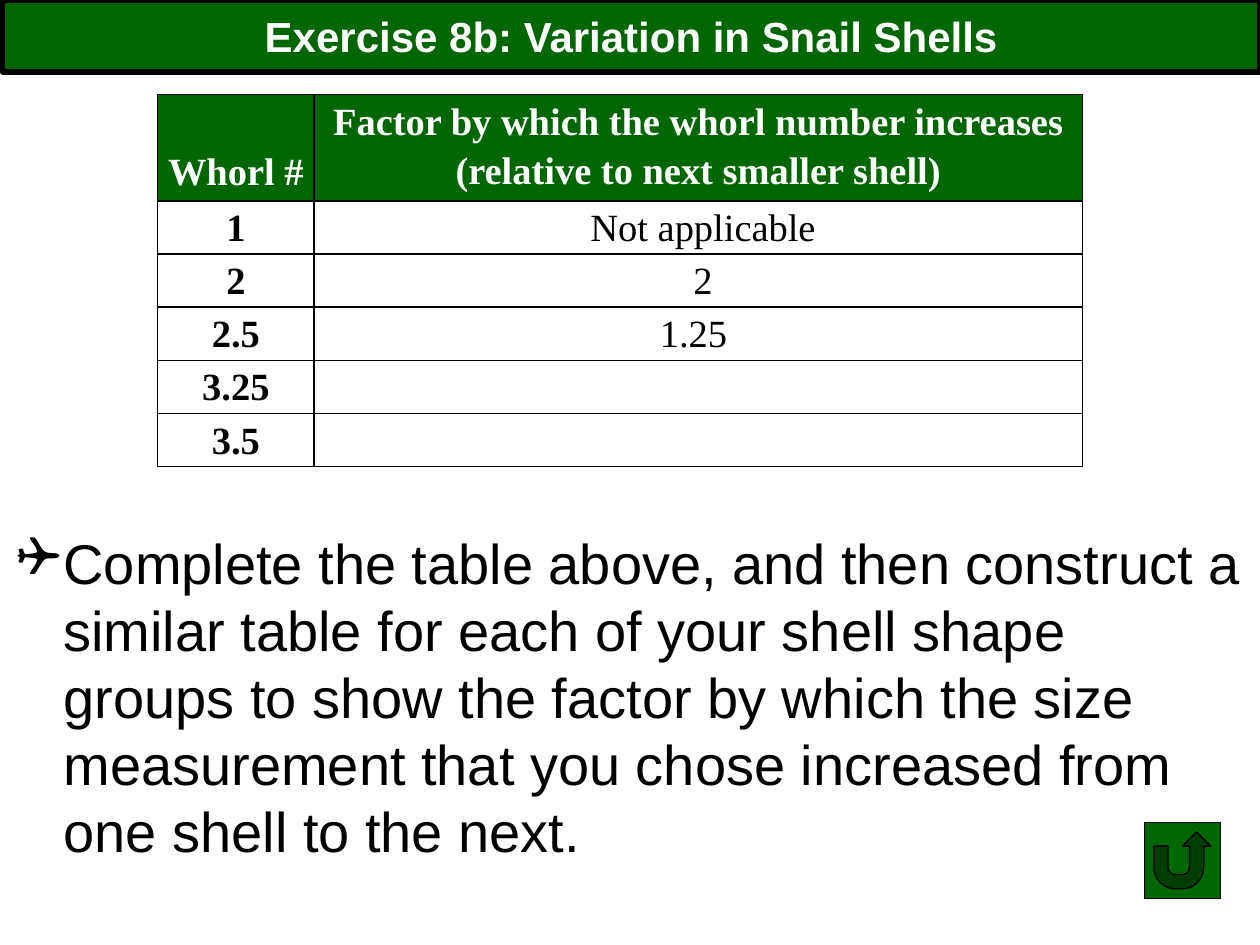
from dataclasses import dataclass

from lxml import etree
from pptx import Presentation
from pptx.dml.color import RGBColor
from pptx.enum.shapes import MSO_SHAPE
from pptx.enum.text import MSO_ANCHOR, PP_ALIGN
from pptx.oxml.ns import qn
from pptx.util import Cm, Pt

RETURN_BUTTON = MSO_SHAPE.ACTION_BUTTON_RETURN
CENTER, LEFT = PP_ALIGN.CENTER, PP_ALIGN.LEFT
TOP, MIDDLE, BOTTOM = MSO_ANCHOR.TOP, MSO_ANCHOR.MIDDLE, MSO_ANCHOR.BOTTOM

GREEN, WHITE, BLACK = "006600", "FFFFFF", "000000"
SANS, SERIF = "Arial", "Times New Roman"


@dataclass
class TextStyle:
    font: str
    size: float
    color: str
    bold: bool = False


@dataclass
class Row:
    whorl: str
    factor: list[str]
    height: float = 0.99
    header: bool = False


ROWS = [
    Row("Whorl #", ["Factor by which the whorl number increases",
                    "(relative to next smaller shell)"], 2.01, True),
    Row("1", [" Not applicable"]),
    Row("2", [" 2"]),
    Row("2.5", ["1.25 "]),
    Row("3.25", []),
    Row("3.5", []),
]
COL_WIDTHS = [3.15, 15.49]


def rgb(color: str) -> RGBColor:
    return RGBColor.from_string(color)


def paint(s, fill: str, line_width: float) -> None:
    s.fill.solid()
    s.fill.fore_color.rgb = rgb(fill)
    s.line.color.rgb = rgb(BLACK)
    s.line.width = Pt(line_width)


def add_run(p, text: str, style: TextStyle) -> None:
    r = p.add_run()
    r.text = text
    r.font.name = style.font
    r.font.size = Pt(style.size)
    r.font.bold = style.bold
    r.font.color.rgb = rgb(style.color)


def add_borders(cell, width: float) -> None:
    tc_pr = cell._tc.get_or_add_tcPr()
    for i, side in enumerate(("lnL", "lnR", "lnT", "lnB")):
        ln = etree.Element(qn(f"a:{side}"), w=str(Pt(width)))
        fill = etree.SubElement(ln, qn("a:solidFill"))
        etree.SubElement(fill, qn("a:srgbClr"), val=BLACK)
        tc_pr.insert(i, ln)


def fill_cell(cell, lines: list[str], style: TextStyle, fill: str) -> None:
    cell.margin_left = cell.margin_right = Cm(0.2)
    cell.margin_top = cell.margin_bottom = 0
    cell.vertical_anchor = TOP
    cell.fill.solid()
    cell.fill.fore_color.rgb = rgb(fill)
    add_borders(cell, 1)
    tf = cell.text_frame
    for i, line in enumerate(lines):
        p = tf.add_paragraph() if i else tf.paragraphs[0]
        p.alignment = CENTER
        p.line_spacing = 1.15
        add_run(p, line, style)


def add_title(slide, text: str) -> None:
    s = slide.shapes.title
    s.left, s.top, s.width, s.height = Cm(0.05), Cm(0), Cm(25.35), Cm(1.45)
    paint(s, GREEN, 3)
    tf = s.text_frame
    tf.vertical_anchor = MIDDLE
    p = tf.paragraphs[0]
    p.alignment = CENTER
    add_run(p, text, TextStyle(SANS, 24, WHITE, True))


def add_task(slide, text: str) -> None:
    s = slide.shapes.add_textbox(Cm(0.08), Cm(10.52), Cm(25.4), Cm(7.49))
    s.fill.solid()
    s.fill.fore_color.rgb = rgb(WHITE)
    tf = s.text_frame
    tf.word_wrap = True
    p = tf.paragraphs[0]
    p_pr = p._p.get_or_add_pPr()
    p_pr.set("marL", str(Cm(0.95)))
    p_pr.set("indent", str(-Cm(0.95)))
    etree.SubElement(p_pr, qn("a:buFont"), typeface="Wingdings")
    etree.SubElement(p_pr, qn("a:buChar"), char="❑")
    p.alignment = LEFT
    add_run(p, text, TextStyle(SANS, 32, BLACK))


def add_whorl_table(slide, rows: list[Row]) -> None:
    frame = slide.shapes.add_table(
        len(rows), len(COL_WIDTHS), Cm(3.18), Cm(1.91),
        Cm(sum(COL_WIDTHS)), Cm(sum(row.height for row in rows)))
    table = frame.table
    for col, width in zip(table.columns, COL_WIDTHS):
        col.width = Cm(width)
    for i, row in enumerate(rows):
        table.rows[i].height = Cm(row.height)
        color, fill = (WHITE, GREEN) if row.header else (BLACK, WHITE)
        fill_cell(table.cell(i, 0), [row.whorl],
                  TextStyle(SERIF, 22, color, True), fill)
        fill_cell(table.cell(i, 1), row.factor,
                  TextStyle(SERIF, 22, color, row.header), fill)
    corner = table.cell(0, 0)
    corner.vertical_anchor = BOTTOM
    corner.margin_bottom = Cm(0.14)


def add_return_button(slide) -> None:
    s = slide.shapes.add_shape(
        RETURN_BUTTON, Cm(23.07), Cm(16.58), Cm(1.53), Cm(1.53))
    s.shadow.inherit = False
    paint(s, GREEN, 0.75)


def main() -> None:
    prs = Presentation()
    prs.slide_width, prs.slide_height = Cm(25.4), Cm(19.05)
    slide = prs.slides.add_slide(prs.slide_layouts[5])
    add_title(slide, "Exercise 8b: Variation in Snail Shells")
    add_task(slide, "Complete the table above, and then construct a similar "
                    "table for each of your shell shape groups to show the "
                    "factor by which the size measurement that you chose "
                    "increased from one shell to the next.")
    add_whorl_table(slide, ROWS)
    add_return_button(slide)
    prs.save("out.pptx")


if __name__ == "__main__":
    main()
